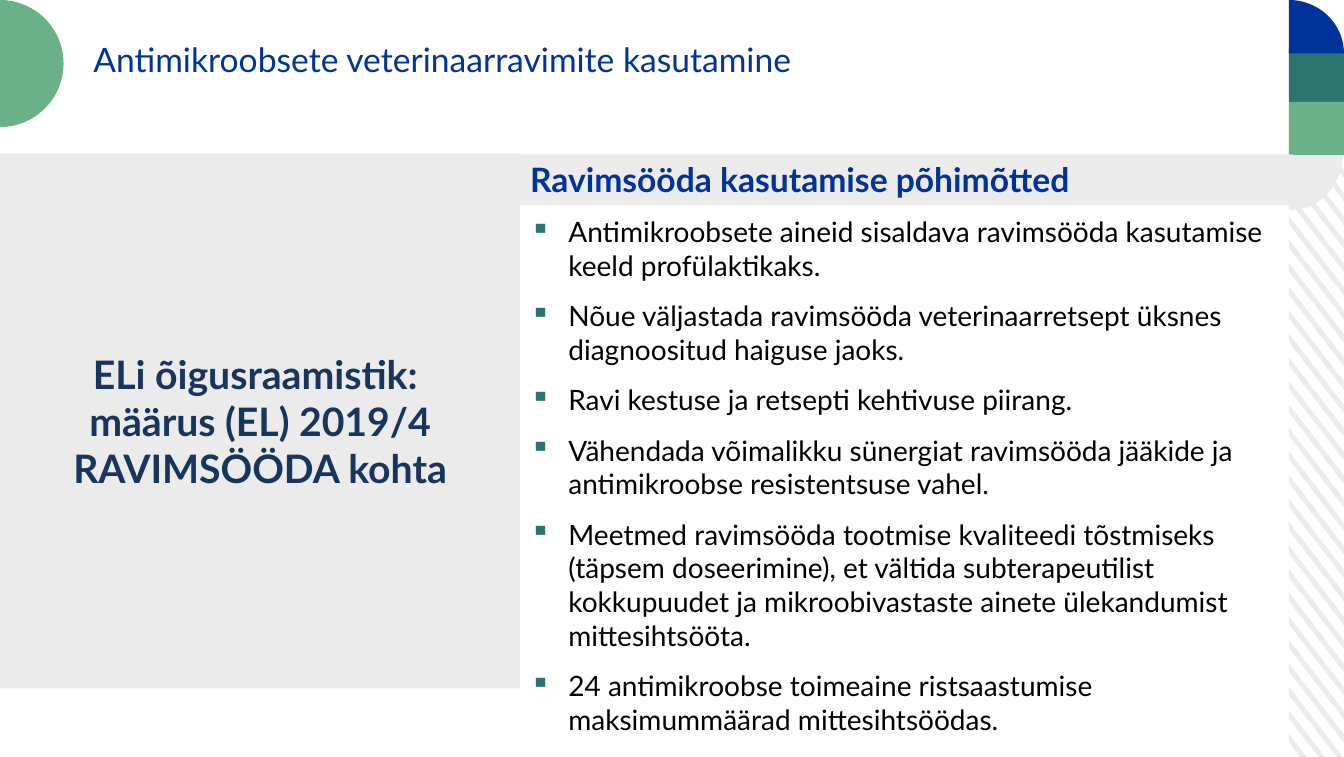
import math

import lxml.etree
import pptx
import pptx.dml.color
import pptx.enum.shapes
import pptx.enum.text
import pptx.oxml.ns
import pptx.util

NAVY = pptx.dml.color.RGBColor(0x00, 0x33, 0x99)
INK = pptx.dml.color.RGBColor(0x19, 0x35, 0x5D)
TEAL = pptx.dml.color.RGBColor(0x2C, 0x74, 0x70)
GREEN = pptx.dml.color.RGBColor(0x6B, 0xB1, 0x88)
GREY = pptx.dml.color.RGBColor(0xEC, 0xEB, 0xEB)
BLACK = pptx.dml.color.RGBColor(0x00, 0x00, 0x00)

LEFT = pptx.enum.text.PP_ALIGN.LEFT
CENTER = pptx.enum.text.PP_ALIGN.CENTER
TOP = pptx.enum.text.MSO_ANCHOR.TOP
MIDDLE = pptx.enum.text.MSO_ANCHOR.MIDDLE

# Grid lines, in hundredths of the slide's width or height
PANEL_EDGE = 38.7
STRIP_LEFT = 95.9
STRIP_TOP = 20.5
TILE_HEIGHT = 7.05
TILE_WIDTH = 4.1

PRINCIPLES = [
    "Antimikroobsete aineid sisaldava ravimsööda kasutamise keeld profülaktikaks.",
    "Nõue väljastada ravimsööda veterinaarretsept üksnes diagnoositud haiguse jaoks.",
    "Ravi kestuse ja retsepti kehtivuse piirang.",
    "Vähendada võimalikku sünergiat ravimsööda jääkide ja antimikroobse resistentsuse vahel.",
    "Meetmed ravimsööda tootmise kvaliteedi tõstmiseks (täpsem doseerimine), et vältida "
    "subterapeutilist kokkupuudet ja mikroobivastaste ainete ülekandumist mittesihtsööta.",
    "24 antimikroobse toimeaine ristsaastumise maksimummäärad mittesihtsöödas.",
]


class Deck:
    """Holds the font and the current slide, on a grid of 100 columns by 100 rows."""

    font = "Lato"

    def __init__(self):
        self.presentation = pptx.Presentation()
        self.presentation.slide_width = pptx.util.Inches(13.33)
        self.presentation.slide_height = pptx.util.Inches(7.51)
        self.slide = self.presentation.slides.add_slide(self.presentation.slide_layouts[5])

    def at(self, column, row):
        return (round(self.presentation.slide_width * column / 100),
                round(self.presentation.slide_height * row / 100))

    def paint(self, shape, color):
        shape.shadow.inherit = False
        shape.fill.solid()
        shape.fill.fore_color.rgb = color
        shape.line.fill.background()
        return shape

    def block(self, column, row, columns, rows, color):
        shape = self.slide.shapes.add_shape(
            pptx.enum.shapes.MSO_SHAPE.RECTANGLE, *self.at(column, row), *self.at(columns, rows))
        return self.paint(shape, color)

    def outline(self, contours, color):
        contours = [[self.at(*point) for point in contour] for contour in contours]
        builder = self.slide.shapes.build_freeform(*contours[0][0])
        for number, contour in enumerate(contours):
            if number:
                builder.move_to(*contour[0])
            builder.add_line_segments(contour[1:], close=True)
        return self.paint(builder.convert_to_shape(), color)

    def sector(self, column, row, columns, rows, start, end, color):
        """Draws a slice of an ellipse; angles are degrees clockwise from the right."""
        arc = [(column + columns * math.cos(math.radians(angle)),
                row + rows * math.sin(math.radians(angle)))
               for angle in range(start, end + 1, 3)]
        return self.outline([[(column, row)] + arc], color)

    def add_text(self, shape, lines, size, color, bold=False, align=LEFT, anchor=TOP):
        frame = shape.text_frame
        frame.word_wrap = True
        frame.auto_size = pptx.enum.text.MSO_AUTO_SIZE.NONE
        frame.vertical_anchor = anchor
        for number, line in enumerate(lines):
            paragraph = frame.add_paragraph() if number else frame.paragraphs[0]
            paragraph.alignment = align
            run = paragraph.add_run()
            run.text = line
            run.font.name = self.font
            run.font.size = pptx.util.Pt(size)
            run.font.bold = bold
            run.font.color.rgb = color
        return frame

    def title(self, column, row, columns, rows, line):
        heading = self.slide.shapes.title
        heading.left, heading.top = self.at(column, row)
        heading.width, heading.height = self.at(columns, rows)
        self.add_text(heading, [line], 24, NAVY)

    def bullets(self, column, row, columns, rows, lines, size, color, mark_color):
        box = self.slide.shapes.add_textbox(*self.at(column, row), *self.at(columns, rows))
        frame = self.add_text(box, lines, size, color)
        qn = pptx.oxml.ns.qn
        indent = pptx.util.Inches(0.38)
        for number, paragraph in enumerate(frame.paragraphs):
            if number:
                paragraph.space_before = pptx.util.Pt(6)
            paragraph.space_after = pptx.util.Pt(6)
            properties = paragraph._p.get_or_add_pPr()
            properties.set("marL", str(indent))
            properties.set("indent", str(-indent))
            mark = lxml.etree.SubElement(properties, qn("a:buClr"))
            lxml.etree.SubElement(mark, qn("a:srgbClr"), val=str(mark_color))
            lxml.etree.SubElement(properties, qn("a:buChar"), char="▪")


def stripe_edge(row, drop=9.43):
    """Returns both ends of a slanted edge, cut off at the top and bottom of the strip."""
    def point(share):
        return STRIP_LEFT + (100 - STRIP_LEFT) * share, row + drop * share

    return [point(max(0, (STRIP_TOP - row) / drop)), point(min(1, (100 - row) / drop))]


def main():
    deck = Deck()

    stripe_rows = [96.94 - 3.11 * number for number in range(28)]
    deck.outline([stripe_edge(row) + stripe_edge(row + 1.09)[::-1] for row in stripe_rows], GREY)
    for tiles_up, color in ((2, TEAL), (1, GREEN)):
        deck.block(STRIP_LEFT, STRIP_TOP - tiles_up * TILE_HEIGHT, TILE_WIDTH, TILE_HEIGHT, color)
    deck.sector(STRIP_LEFT, TILE_HEIGHT, TILE_WIDTH, TILE_HEIGHT, -90, 0, NAVY)
    deck.sector(STRIP_LEFT, STRIP_TOP, 4, 7.3, 0, 90, GREY)
    deck.sector(0, 8.39, 4.73, 8.39, -90, 90, GREEN)

    deck.title(6.2, 4.5, 65.7, 7.7, "Antimikroobsete veterinaarravimite kasutamine")

    principles_bar = deck.block(PANEL_EDGE, 20.4, 57.5, 6.7, GREY)
    deck.add_text(principles_bar, ["Ravimsööda kasutamise põhimõtted"], 24, NAVY, bold=True)

    framework_panel = deck.block(0, 20.25, PANEL_EDGE, 70.7, GREY)
    deck.add_text(framework_panel,
                  ["ELi õigusraamistik: ", "määrus (EL) 2019/4 RAVIMSÖÖDA kohta"],
                  28, INK, bold=True, align=CENTER, anchor=MIDDLE)

    deck.bullets(PANEL_EDGE, 27.7, 56.9, 70.8, PRINCIPLES, 20, BLACK, TEAL)

    deck.presentation.save("out.pptx")


if __name__ == "__main__":
    main()
